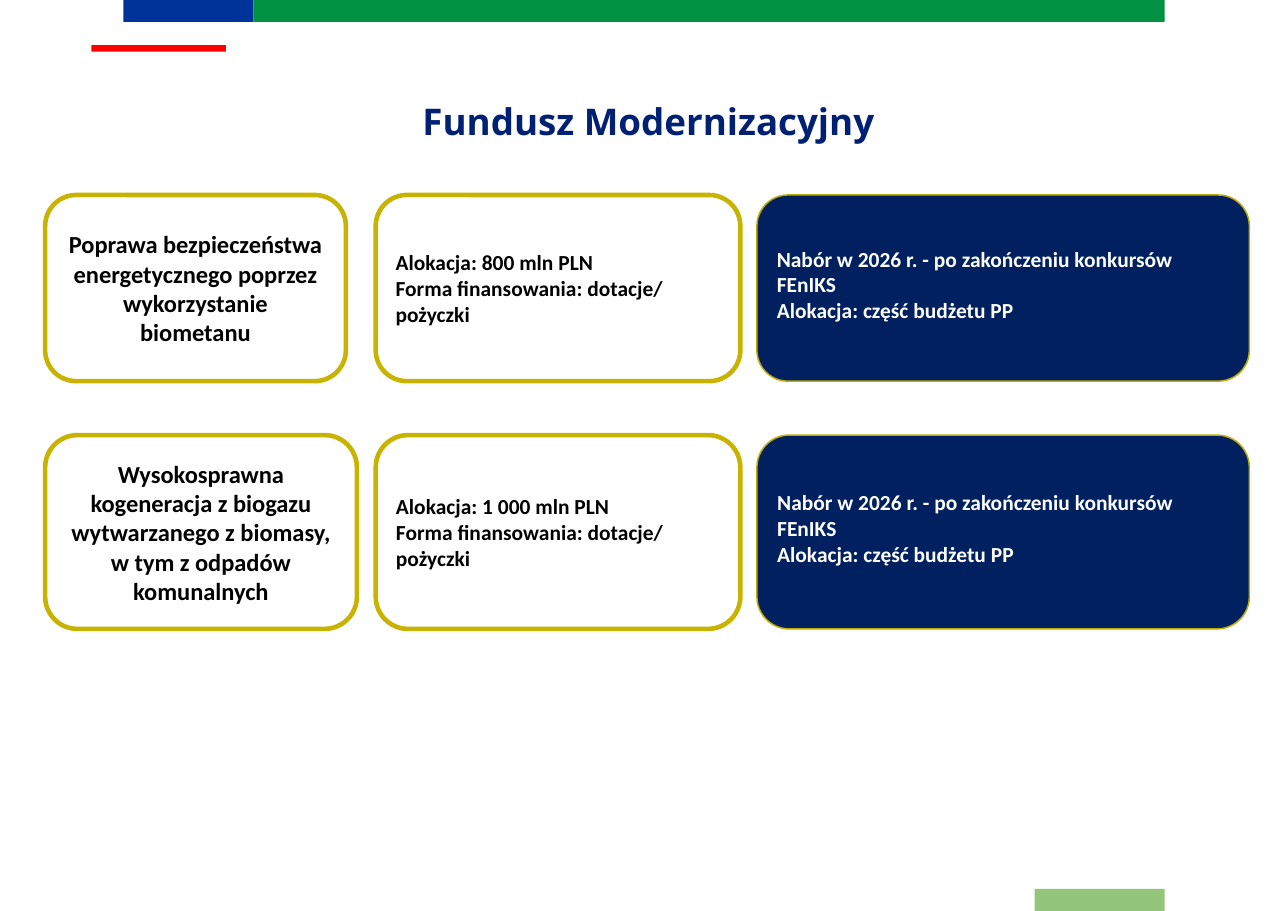
import pptx
import pptx.util
import pptx.dml.color
import pptx.enum.shapes
import pptx.enum.text

Pt = pptx.util.Pt
RGBColor = pptx.dml.color.RGBColor
KIND = pptx.enum.shapes.MSO_SHAPE
ALIGN = pptx.enum.text.PP_ALIGN
MIDDLE = pptx.enum.text.MSO_ANCHOR.MIDDLE

BLUE = RGBColor(0x00, 0x33, 0x99)
GREEN = RGBColor(0x00, 0x92, 0x42)
LIME = RGBColor(0x93, 0xC6, 0x7B)
RED = RGBColor(0xFF, 0x00, 0x00)
INK = RGBColor(0x00, 0x20, 0x73)
NAVY = RGBColor(0x00, 0x20, 0x60)
GOLD = RGBColor(0xC8, 0xB3, 0x00)
OLIVE = RGBColor(0xBD, 0xAA, 0x08)
WHITE = RGBColor(0xFF, 0xFF, 0xFF)
BLACK = RGBColor(0x00, 0x00, 0x00)

deck = pptx.Presentation()
deck.slide_width = Pt(841.68)
deck.slide_height = Pt(595.44)
slide = deck.slides.add_slide(deck.slide_layouts[5])


def add_block(kind, left, top, width, height, fill):
    block = slide.shapes.add_shape(kind, Pt(left), Pt(top), Pt(width), Pt(height))
    block.shadow.inherit = False
    block.fill.solid()
    block.fill.fore_color.rgb = fill
    return block


def add_card(left, top, width, height, lines, size, align, look):
    fill, edge, weight, ink, foot = look
    card = add_block(KIND.ROUNDED_RECTANGLE, left, top, width, height, fill)
    card.line.color.rgb = edge
    card.line.width = Pt(weight)
    frame = card.text_frame
    frame.word_wrap = True
    frame.vertical_anchor = MIDDLE
    frame.margin_bottom = Pt(foot)
    frame.text = "\n".join(lines)
    for para in frame.paragraphs:
        para.alignment = align
        para.font.name = "Calibri"
        para.font.size = Pt(size)
        para.font.bold = True
        para.font.color.rgb = ink


# Colour bars at the page edges
for left, top, width, height, fill in [
    (80.64, 0, 84.96, 14.4, BLUE),
    (165.6, 0, 595.44, 14.4, GREEN),
    (676.08, 581.04, 84.96, 14.4, LIME),
    (59.76, 29.52, 87.84, 4.32, RED),
]:
    add_block(KIND.RECTANGLE, left, top, width, height, fill).line.fill.background()

# Title
title = slide.shapes.title
title.left, title.top = Pt(18.72), Pt(54)
title.width, title.height = Pt(810), Pt(42.48)
frame = title.text_frame
frame.margin_left = frame.margin_right = 0
frame.margin_top = frame.margin_bottom = 0
frame.vertical_anchor = MIDDLE
frame.text = "Fundusz Modernizacyjny"
para = frame.paragraphs[0]
para.alignment = ALIGN.CENTER
para.line_spacing = Pt(36)
para.font.name = "Open Sans"
para.font.size = Pt(24)
para.font.bold = True
para.font.color.rgb = INK

# Programme rows: goal, budget, call
LIGHT = (WHITE, GOLD, 3, BLACK, 3.6)
DARK = (NAVY, OLIVE, 1, WHITE, 8.6)
for top, height, width, goal, sum_text in [
    (127.44, 121.68, 196.56,
     "Poprawa bezpieczeństwa energetycznego poprzez wykorzystanie biometanu",
     "800 mln PLN"),
    (284.4, 126.72, 203.76,
     "Wysokosprawna kogeneracja z biogazu wytwarzanego z biomasy, "
     "w tym z odpadów komunalnych",
     "1 000 mln PLN"),
]:
    budget = [f"Alokacja: {sum_text}", "Forma finansowania: dotacje/ pożyczki"]
    call = ["Nabór w 2026 r. - po zakończeniu konkursów FEnIKS",
            "Alokacja: część budżetu PP"]
    add_card(29.52, top, width, height, [goal], 16, ALIGN.CENTER, LIGHT)
    add_card(245.52, top, 238.32, height, budget, 14, ALIGN.LEFT, LIGHT)
    add_card(494.64, top, 321.84, height, call, 14, ALIGN.LEFT, DARK)

deck.save("out.pptx")
